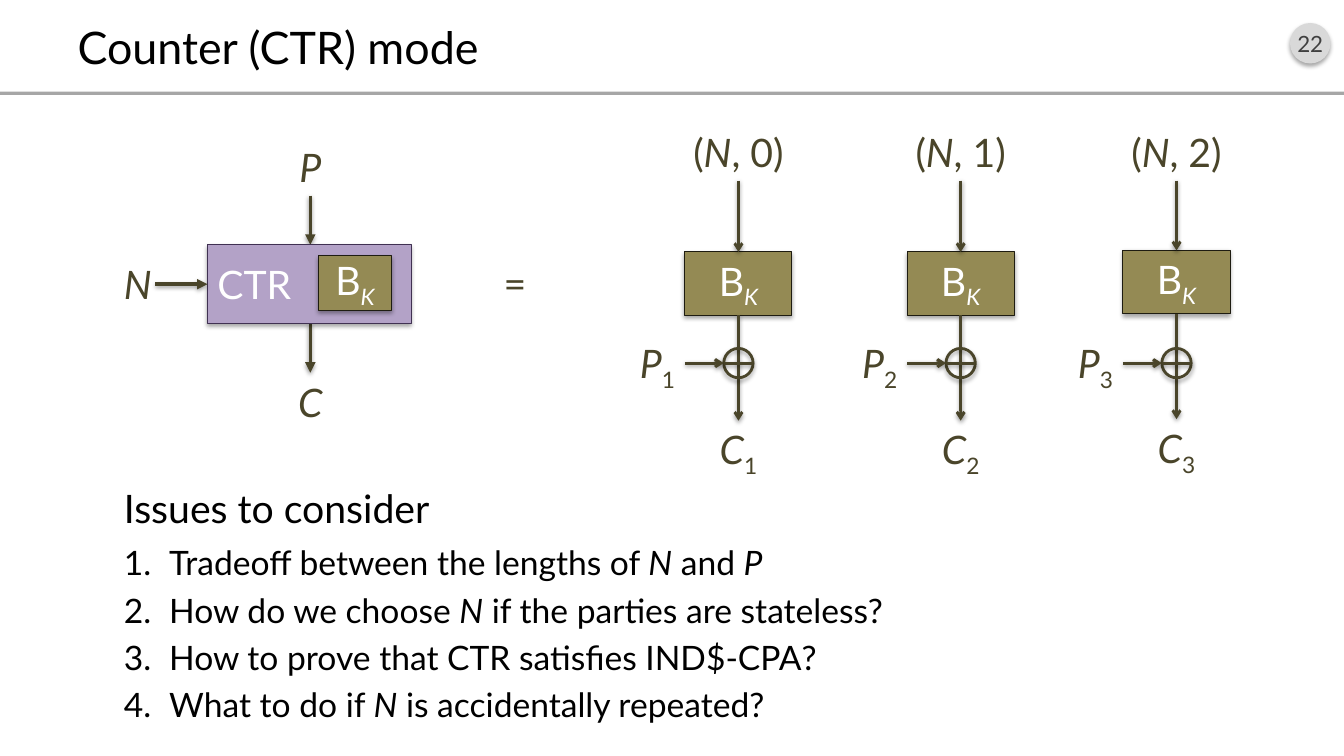
from pptx import Presentation
from pptx.dml.color import RGBColor
from pptx.enum.shapes import MSO_CONNECTOR, MSO_SHAPE
from pptx.enum.text import MSO_ANCHOR, MSO_AUTO_SIZE, PP_ALIGN
from pptx.oxml import parse_xml
from pptx.oxml.ns import nsdecls, qn
from pptx.util import Cm, Pt

COLORS = {
    "black": "000000", "white": "FFFFFF", "ink": "4A452A", "olive": "948A54",
    "olive edge": "1E1C11", "purple": "B3A2C7", "purple edge": "403152",
    "badge": "D9D9D9", "badge text": "404040", "rule": "A6A6A6",
}
CIPHER = "B*_K*"
ISSUES = [
    "Tradeoff between the lengths of *N* and *P*",
    "How do we choose *N* if the parties are stateless?",
    "How to prove that CTR satisfies IND$-CPA?",
    "What to do if *N* is accidentally repeated?",
]


def color(name):
    return RGBColor.from_string(COLORS[name])


def set_format(target, **values):
    for name, value in values.items():
        setattr(target, name, value)


def add_shadow(shape, opacity, distance):
    shape._element.spPr.append(parse_xml(
        f'<a:effectLst {nsdecls("a")}><a:outerShdw blurRad="40000" dist="{distance}" '
        f'dir="5400000" rotWithShape="0"><a:srgbClr val="{COLORS["black"]}">'
        f'<a:alpha val="{opacity}000"/></a:srgbClr></a:outerShdw></a:effectLst>'))


class SlideBuilder:
    """Draws on one page; lengths are centimetres, text sizes points."""

    def __init__(self, page, font="Lato", size=28):
        self.page, self.font, self.size = page, font, size

    def add_text(self, para, text, tint="ink", size=None, align=PP_ALIGN.CENTER):
        """Fill a paragraph; *x* is italic and _x_ (or a trailing _x) is subscript."""
        para.alignment = align
        for i, piece in enumerate(text.split("*")):
            for j, part in enumerate(piece.split("_")):
                if not part:
                    continue
                span = para.add_run()
                span.text = part
                set_format(span.font, name=self.font, size=Pt(size or self.size),
                           italic=i % 2 == 1)
                span.font.color.rgb = color(tint)
                if j % 2:
                    span._r.get_or_add_rPr().set("baseline", "-25000")

    def place(self, shape, left, top, width, height):
        set_format(shape, left=Cm(left), top=Cm(top), width=Cm(width), height=Cm(height))

    def title(self, text):
        box = self.page.shapes.title
        self.place(box, 1.7, 0.4, 30.48, 1.53)
        set_format(box.text_frame, vertical_anchor=MSO_ANCHOR.MIDDLE,
                   auto_size=MSO_AUTO_SIZE.NONE)
        self.add_text(box.text_frame.paragraphs[0], text, "black", 32, PP_ALIGN.LEFT)

    def numbered_list(self, heading, items):
        box = self.page.placeholders[1]
        self.place(box, 2.87, 12.07, 19.96, 6.38)
        frame = box.text_frame
        set_format(frame, word_wrap=False, auto_size=MSO_AUTO_SIZE.NONE,
                   vertical_anchor=MSO_ANCHOR.TOP)
        for i, text in enumerate([heading] + items):
            para = frame.add_paragraph() if i else frame.paragraphs[0]
            self.add_text(para, text, "black", 24 if i else 28, PP_ALIGN.LEFT)
            set_format(para, space_before=Pt(0), space_after=Pt(5 if i else 8))
            indent = Cm(1.14) if i else 0
            properties = para._p.get_or_add_pPr()
            properties.set("marL", str(indent))
            properties.set("indent", str(-indent))
            bullet = 'a:buAutoNum type="arabicPeriod"' if i else "a:buNone"
            properties.append(parse_xml(f"<{bullet} {nsdecls('a')}/>"))

    def label(self, text, left, top, width, align=PP_ALIGN.CENTER):
        box = self.page.shapes.add_textbox(Cm(left), Cm(top), Cm(width), Cm(1.45))
        box.text_frame.word_wrap = True
        self.add_text(box.text_frame.paragraphs[0], text, align=align)

    def shape(self, kind, left, top, width, height, fill=None, edge=None,
              weight=0.75, shadow=True):
        shape = self.page.shapes.add_shape(
            kind, Cm(left), Cm(top), Cm(width), Cm(height))
        if fill:
            shape.fill.solid()
            shape.fill.fore_color.rgb = color(fill)
        else:
            shape.fill.background()
        if edge:
            shape.line.color.rgb = color(edge)
            shape.line.width = Pt(weight)
        else:
            shape.line.fill.background()
        if shadow:
            add_shadow(shape, 35, 23000)
        else:
            shape.shadow.inherit = False
        shape.text_frame.vertical_anchor = MSO_ANCHOR.MIDDLE
        return shape

    def block(self, text, left, top, width, height, fill="olive", align=PP_ALIGN.CENTER):
        box = self.shape(MSO_SHAPE.RECTANGLE, left, top, width, height, fill, f"{fill} edge")
        self.add_text(box.text_frame.paragraphs[0], text, "white", align=align)

    def line(self, x1, y1, x2, y2, head=None, weight=2):
        line = self.page.shapes.add_connector(
            MSO_CONNECTOR.STRAIGHT, Cm(x1), Cm(y1), Cm(x2), Cm(y2))
        line.line.color.rgb = color("ink")
        line.line.width = Pt(weight)
        if head:
            line._element.spPr.find(qn("a:ln")).append(
                parse_xml(f'<a:tailEnd {nsdecls("a")} type="{head}"/>'))
        add_shadow(line, 38, 20000)

    def page_number(self, number):
        badge = self.shape(MSO_SHAPE.OVAL, 32.51, 0.58, 1.02, 1.02, "badge")
        set_format(badge.text_frame, margin_left=0, margin_right=0)
        self.add_text(badge.text_frame.paragraphs[0], number, "badge text", 16)

    def mode_summary(self):
        center, middle = 7.82, 7.16
        for top in (4.93, 8.15):
            self.line(center, top, center, top + 1.24, "triangle", 2.5)
        self.block("CTR", 5.23, 6.17, 5.13, 1.98, "purple", PP_ALIGN.LEFT)
        self.block(CIPHER, 8.03, 6.45, 1.83, 1.37)
        self.label("*P*", center - 1.12, 3.48, 2.24)
        self.label("*C*", center - 1.12, 9.4, 2.24)
        self.label("*N*", 2.87, 6.43, 1.04, PP_ALIGN.RIGHT)
        self.line(3.91, middle, 5.23, middle, "triangle", 2.5)

    def counter_column(self, index, center, lift):
        """Encrypt one counter value and add it to one plaintext block."""
        top, half, radius, xor = 6.35 - lift, 1.35, 0.37, 9.15
        bottom, end = top + 1.6, 10.6 - lift
        self.block(CIPHER, center - half, top, 2 * half, 1.6)
        self.line(center, 4.55, center, top, "arrow")
        self.line(center, bottom, center, end, "arrow")
        self.label(f"(*N*, {index})", center - 1.95, 3.1, 3.9)
        self.label(f"*C*_{index + 1}", center - 1.95, end, 3.9)
        self.shape(MSO_SHAPE.OVAL, center - radius, xor - radius, 2 * radius,
                   2 * radius, edge="ink", weight=2)
        self.line(center - radius, xor, center + radius, xor)
        self.label(f"*P*_{index + 1}", center - half - 1.96, 8.43, 1.96, PP_ALIGN.RIGHT)
        self.line(center - half, xor, center - radius, xor, "arrow")


def main():
    deck = Presentation()
    set_format(deck, slide_width=Cm(33.87), slide_height=Cm(19.05))
    builder = SlideBuilder(deck.slides.add_slide(deck.slide_layouts[1]))
    builder.page_number("22")
    builder.shape(MSO_SHAPE.RECTANGLE, 0, 2.31, 33.87, 0.08, "rule", shadow=False)
    builder.title("Counter (CTR) mode")
    builder.mode_summary()
    builder.label("=", 11.86, 6.4, 2.24)
    for index, (center, lift) in enumerate([(18.61, 0), (24.21, 0), (29.65, 0.04)]):
        builder.counter_column(index, center, lift)
    builder.numbered_list("Issues to consider", ISSUES)
    deck.save("out.pptx")


if __name__ == "__main__":
    main()
